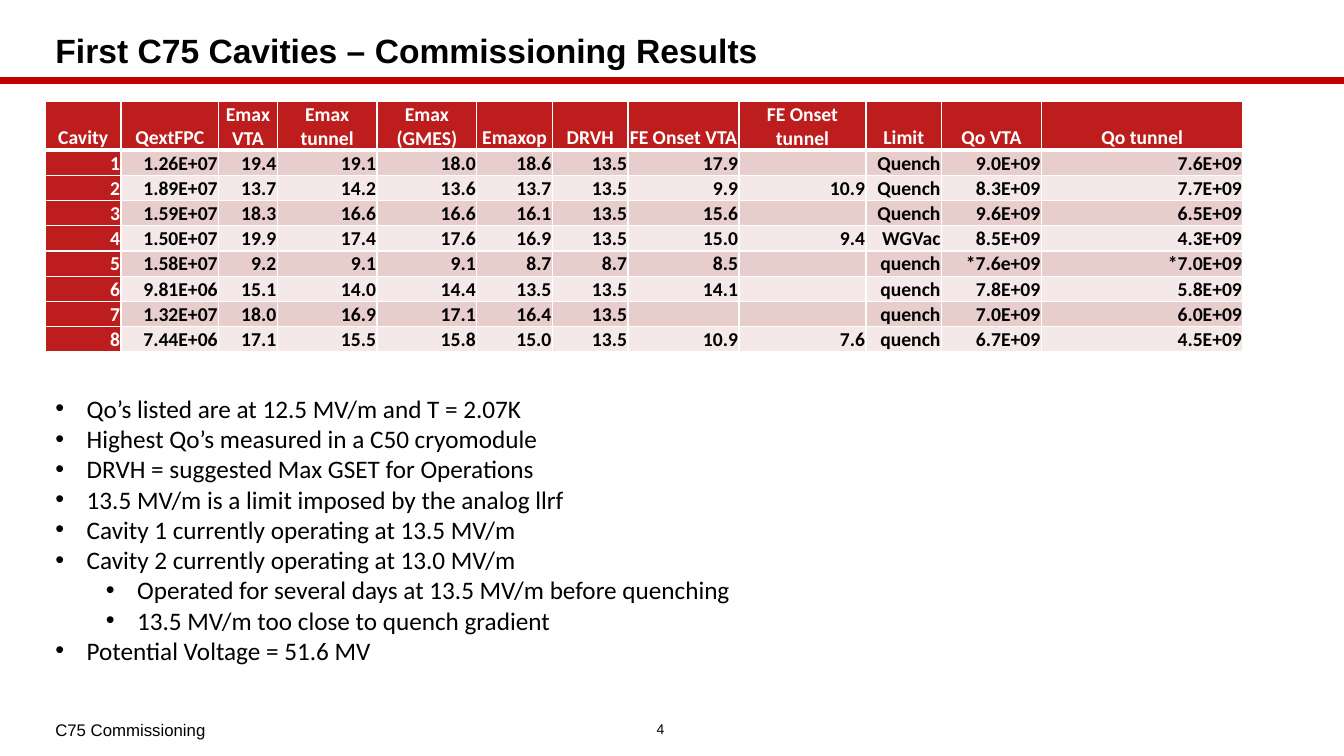
from lxml import etree
from pptx import Presentation
from pptx.dml.color import RGBColor
from pptx.enum.shapes import MSO_CONNECTOR
from pptx.enum.text import MSO_ANCHOR, MSO_AUTO_SIZE, PP_ALIGN
from pptx.oxml.ns import qn
from pptx.util import Inches, Pt

LEFT, CENTER, RIGHT = PP_ALIGN.LEFT, PP_ALIGN.CENTER, PP_ALIGN.RIGHT
TOP, MIDDLE, BOTTOM = MSO_ANCHOR.TOP, MSO_ANCHOR.MIDDLE, MSO_ANCHOR.BOTTOM
STRAIGHT = MSO_CONNECTOR.STRAIGHT
NO_AUTOFIT = MSO_AUTO_SIZE.NONE

BLACK, WHITE = "000000", "FFFFFF"
RULE_RED, TABLE_RED = "C00000", "BE1D1D"
BANDS = ("E8CDCD", "F4E8E8")
MARGIN = 0.45

COLUMN_WIDTHS = (0.75, 0.97, 0.58, 0.99, 0.99, 0.75, 0.75, 1.1, 1.26, 0.75, 0.99, 2)
HEADER_HEIGHT, ROW_HEIGHT = 0.48, 0.25
CELL_FONT_SIZE = 14
RESULTS = (
    ("Cavity", "QextFPC", "Emax VTA", "Emax tunnel", "Emax (GMES)", "Emaxop", "DRVH",
     "FE Onset VTA", "FE Onset tunnel", "Limit", "Qo VTA", "Qo tunnel"),
    ("1", "1.26E+07", "19.4", "19.1", "18.0", "18.6", "13.5", "17.9", "", "Quench", "9.0E+09", "7.6E+09"),
    ("2", "1.89E+07", "13.7", "14.2", "13.6", "13.7", "13.5", "9.9", "10.9", "Quench", "8.3E+09", "7.7E+09"),
    ("3", "1.59E+07", "18.3", "16.6", "16.6", "16.1", "13.5", "15.6", "", "Quench", "9.6E+09", "6.5E+09"),
    ("4", "1.50E+07", "19.9", "17.4", "17.6", "16.9", "13.5", "15.0", "9.4", "WGVac", "8.5E+09", "4.3E+09"),
    ("5", "1.58E+07", "9.2", "9.1", "9.1", "8.7", "8.7", "8.5", "", "quench", "*7.6e+09", "*7.0E+09"),
    ("6", "9.81E+06", "15.1", "14.0", "14.4", "13.5", "13.5", "14.1", "", "quench", "7.8E+09", "5.8E+09"),
    ("7", "1.32E+07", "18.0", "16.9", "17.1", "16.4", "13.5", "", "", "quench", "7.0E+09", "6.0E+09"),
    ("8", "7.44E+06", "17.1", "15.5", "15.8", "15.0", "13.5", "10.9", "7.6", "quench", "6.7E+09", "4.5E+09"),
)
NOTES = (
    (0, "Qo’s listed are at 12.5 MV/m and T = 2.07K"),
    (0, "Highest Qo’s measured in a C50 cryomodule"),
    (0, "DRVH = suggested Max GSET for Operations"),
    (0, "13.5 MV/m is a limit imposed by the analog llrf"),
    (0, "Cavity 1 currently operating at 13.5 MV/m"),
    (0, "Cavity 2 currently operating at 13.0 MV/m"),
    (1, "Operated for several days at 13.5 MV/m before quenching"),
    (1, "13.5 MV/m too close to quench gradient"),
    (0, "Potential Voltage = 51.6 MV"),
)


def color(hex_code):
    return RGBColor.from_string(hex_code)


def place(shape, left, top, width, height):
    shape.left, shape.top = Inches(left), Inches(top)
    shape.width, shape.height = Inches(width), Inches(height)


def format_para(para, font_name, size, hex_code, align=LEFT, bold=False):
    para.alignment = align
    for span in para.runs:
        span.font.name = font_name
        span.font.size = Pt(size)
        span.font.bold = bold
        span.font.color.rgb = color(hex_code)


def add_title(page, text, left, top, width, height):
    title = page.shapes.title
    place(title, left, top, width, height)
    frame = title.text_frame
    frame.text = text
    frame.auto_size = NO_AUTOFIT
    frame.vertical_anchor = MIDDLE
    para = frame.paragraphs[0]
    para.line_spacing = 0.9
    format_para(para, "Arial", 24, BLACK, bold=True)


def add_rule(page, left, right, top):
    rule = page.shapes.add_connector(STRAIGHT, Inches(left), Inches(top), Inches(right), Inches(top))
    rule.line.color.rgb = color(RULE_RED)
    rule.line.width = Pt(4.5)
    etree.SubElement(rule._element.spPr, qn("a:effectLst"))


def set_borders(cell, top_width, bottom_width):
    properties = cell._tc.get_or_add_tcPr()
    for side, width in (("L", 1), ("R", 1), ("T", top_width), ("B", bottom_width)):
        line = etree.SubElement(properties, qn(f"a:ln{side}"), w=str(Pt(width)))
        fill = etree.SubElement(line, qn("a:solidFill"))
        etree.SubElement(fill, qn("a:srgbClr"), val=WHITE)


def fill_cell(cell, text, row, column):
    is_header = row == 0
    is_red = is_header or column == 0
    cell.margin_left = cell.margin_right = cell.margin_top = Inches(0.01)
    cell.margin_bottom = 0
    cell.vertical_anchor = BOTTOM
    set_borders(cell, 3 if row == 1 else 1, 3 if is_header else 1)
    cell.fill.solid()
    cell.fill.fore_color.rgb = color(TABLE_RED if is_red else BANDS[(row - 1) % 2])
    para = cell.text_frame.paragraphs[0]
    if text:
        para.text = text
    else:
        etree.SubElement(para._p, qn("a:endParaRPr"), sz=str(CELL_FONT_SIZE * 100))
    format_para(para, "Calibri", CELL_FONT_SIZE, WHITE if is_red else BLACK,
                CENTER if is_header else RIGHT, bold=True)


def add_results_table(page, left, top):
    heights = [HEADER_HEIGHT] + [ROW_HEIGHT] * (len(RESULTS) - 1)
    frame = page.shapes.add_table(len(RESULTS), len(COLUMN_WIDTHS), Inches(left), Inches(top),
                                  Inches(sum(COLUMN_WIDTHS)), Inches(sum(heights)))
    table = frame.table
    for column, width in zip(table.columns, COLUMN_WIDTHS):
        column.width = Inches(width)
    for row, height in zip(table.rows, heights):
        row.height = Inches(height)
    for row, texts in enumerate(RESULTS):
        for column, text in enumerate(texts):
            fill_cell(table.cell(row, column), text, row, column)


def add_bullet(para, level):
    para.level = level
    properties = para._p.get_or_add_pPr()
    properties.set("marL", str(Inches(0.31 + 0.5 * level)))
    properties.set("indent", str(Inches(-0.31)))
    etree.SubElement(properties, qn("a:buFont"), typeface="Arial")
    etree.SubElement(properties, qn("a:buChar"), char="•")


def add_notes_list(page, left, top, width, height):
    body = page.placeholders[1]
    place(body, left, top, width, height)
    frame = body.text_frame
    frame.text = "\n".join(text for _, text in NOTES)
    frame.auto_size = NO_AUTOFIT
    frame.vertical_anchor = TOP
    for para, (level, _) in zip(frame.paragraphs, NOTES):
        add_bullet(para, level)
        para.space_before = Pt(0)
        format_para(para, "Calibri", 18, BLACK)


def add_footer_text(page, text, size, align, left, top, width, height):
    box = page.shapes.add_textbox(Inches(left), Inches(top), Inches(width), Inches(height))
    frame = box.text_frame
    frame.word_wrap = True
    frame.vertical_anchor = MIDDLE
    frame.text = text
    format_para(frame.paragraphs[0], "Arial", size, BLACK, align)


def main():
    deck = Presentation()
    deck.slide_width, deck.slide_height = Inches(13.33), Inches(7.5)
    page = deck.slides.add_slide(deck.slide_layouts[1])
    add_rule(page, -0.02, 13.33, 0.8)
    add_title(page, "First C75 Cavities – Commissioning Results", MARGIN, 0.26, 12.34, 0.53)
    add_footer_text(page, "C75 Commissioning", 12, LEFT, MARGIN, 7.07, 5.71, 0.34)
    add_footer_text(page, "4", 10, CENTER, 6.16, 7.07, 0.78, 0.33)
    add_results_table(page, MARGIN, 1.01)
    add_notes_list(page, MARGIN, 3.85, 6.97, 2.83)
    deck.save("out.pptx")


if __name__ == "__main__":
    main()
